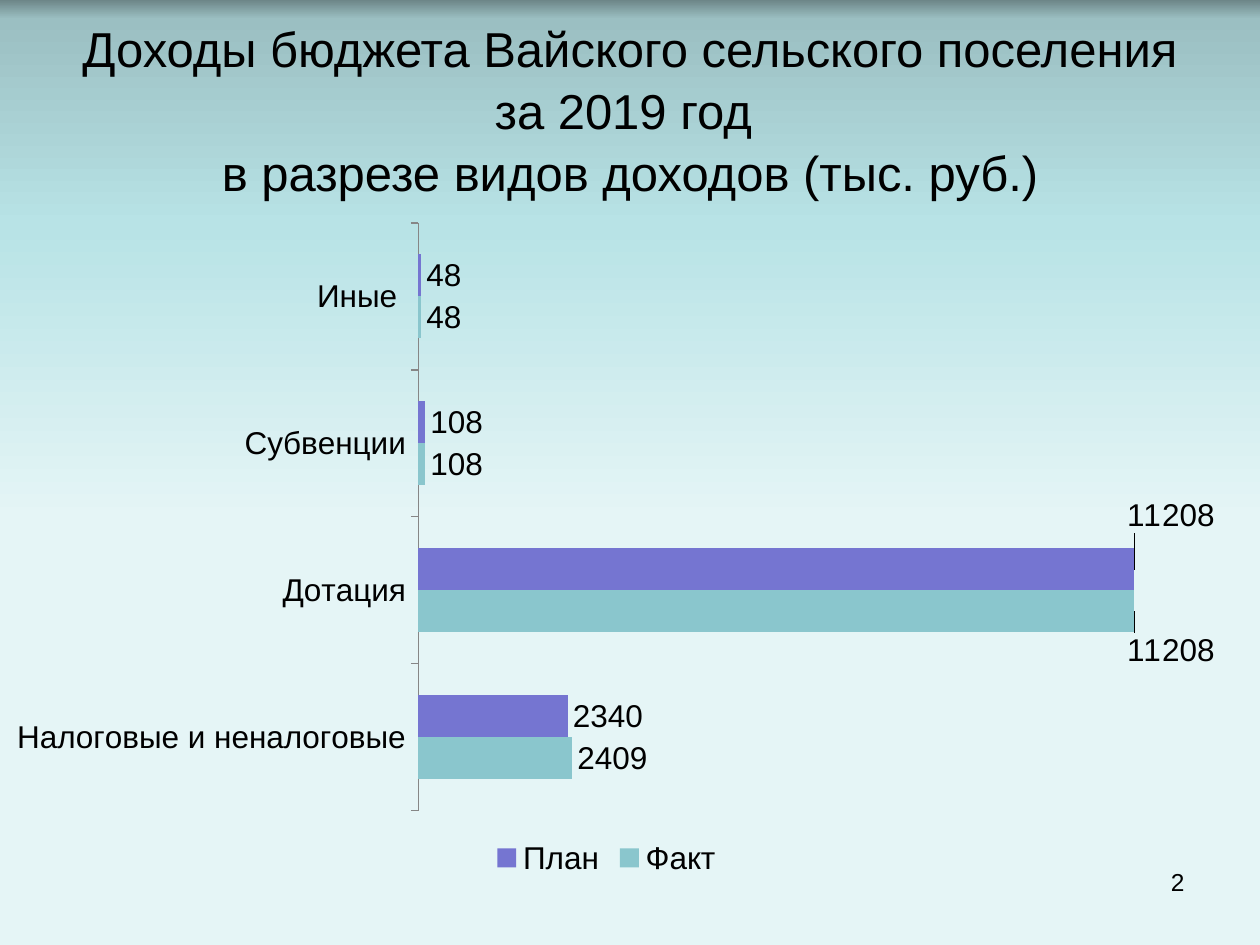
from lxml import etree
from pptx import Presentation
from pptx import util as u
from pptx.chart.data import CategoryChartData
from pptx.dml.color import RGBColor
from pptx.enum import chart as ch, text
from pptx.oxml import parse_xml
from pptx.oxml.ns import nsdecls, qn

FONT = "Arial"
COLORS = {"text": "000000", "axis": "868686", "plan": "7575D1", "fact": "8AC6CD"}
BACKGROUND = [(0, "6D8688"), (2, "9BBFC2"), (24, "B8E3E6"), (55, "E5F5F6"), (100, "E5F5F6")]
CATEGORIES = ["Налоговые и неналоговые", "Дотация", "Субвенции", "Иные "]
# name, values, colour, vertical shift of the label on the longest bar
SERIES = [
    ("Факт", (2409, 11208, 108, 48), "fact", 0.058),
    ("План", (2340, 11208, 108, 48), "plan", -0.08),
]
LONGEST = 1


def rgb(name):
    return RGBColor.from_string(COLORS[name])


def set_font(font, size):
    font.name = FONT
    font.size = u.Pt(size)
    font.bold = False
    font.color.rgb = rgb("text")


def set_background(page):
    stops = "".join(
        f'<a:gs pos="{pos * 1000}"><a:srgbClr val="{color}"/></a:gs>' for pos, color in BACKGROUND
    )
    page.background.fill.solid()
    solid = page.background._cSld.bg.bgPr.find(qn("a:solidFill"))
    gradient = parse_xml(
        f'<a:gradFill {nsdecls("a")} rotWithShape="1"><a:gsLst>{stops}</a:gsLst>'
        '<a:lin ang="5400000" scaled="0"/></a:gradFill>'
    )
    solid.getparent().replace(solid, gradient)


def add_text(page, content, left, top, width, height, size, align,
             anchor=text.MSO_ANCHOR.TOP, spacing=1.0):
    box = page.shapes.add_textbox(u.Cm(left), u.Cm(top), u.Cm(width), u.Cm(height))
    frame = box.text_frame
    frame.word_wrap = True
    frame.vertical_anchor = anchor
    para = frame.paragraphs[0]
    para.text = content
    para.alignment = align
    para.line_spacing = spacing
    for span in para.runs:
        set_font(span.font, size)


def manual_layout(**values):
    """Build a chart layout element from its settings, in schema order."""
    layout = etree.Element(qn("c:layout"))
    manual = etree.SubElement(layout, qn("c:manualLayout"))
    for name, value in values.items():
        etree.SubElement(manual, qn(f"c:{name}")).set("val", str(value))
    return layout


def format_series(series, color, shift):
    series.format.fill.solid()
    series.format.fill.fore_color.rgb = rgb(color)
    labels = series.data_labels
    labels.show_value = True
    labels.position = ch.XL_LABEL_POSITION.OUTSIDE_END
    set_font(labels.font, 18)
    series.points[LONGEST].data_label.position = ch.XL_LABEL_POSITION.OUTSIDE_END
    label = labels._element.find(qn("c:dLbl"))
    label.find(qn("c:idx")).addnext(manual_layout(x=-0.01, y=shift))


def add_income_chart(page):
    data = CategoryChartData(number_format="General")
    data.categories = CATEGORIES
    for name, values, _, _ in SERIES:
        data.add_series(name, values)
    chart = page.shapes.add_chart(
        ch.XL_CHART_TYPE.BAR_CLUSTERED, u.Cm(-0.08), u.Cm(4.24), u.Cm(24.61), u.Cm(13.54), data
    ).chart
    set_font(chart.font, 18)
    chart.has_title = False
    chart.has_legend = True
    chart.legend.position = ch.XL_LEGEND_POSITION.BOTTOM
    chart.legend.include_in_layout = False
    set_font(chart.legend.font, 18)

    axis = chart.category_axis
    axis.format.line.color.rgb = rgb("axis")
    axis.major_tick_mark = ch.XL_TICK_MARK.OUTSIDE
    set_font(axis.tick_labels.font, 18)
    scale = chart.value_axis
    scale.visible = False
    scale.has_major_gridlines = False
    scale.minimum_scale, scale.maximum_scale = 0, 12000

    plot = chart.plots[0]
    plot.gap_width = 150
    plot.vary_by_categories = False
    for series, (_, _, color, shift) in zip(plot.series, SERIES):
        format_series(series, color, shift)

    area = chart._chartSpace.chart.plotArea
    for old in area.findall(qn("c:layout")):
        area.remove(old)
    area.insert(0, manual_layout(layoutTarget="inner", xMode="edge", yMode="edge",
                                 x=0.346, y=0.019, w=0.628, h=0.875))


def main():
    deck = Presentation()
    deck.slide_width, deck.slide_height = u.Cm(25.4), u.Cm(19.05)
    page = deck.slides.add_slide(deck.slide_layouts[6])
    set_background(page)
    add_text(page, "Доходы бюджета Вайского сельского поселения за 2019 год \v"
             "в разрезе видов доходов (тыс. руб.)",
             1.27, 0.43, 22.86, 3.5, size=28, align=text.PP_ALIGN.CENTER,
             anchor=text.MSO_ANCHOR.MIDDLE, spacing=1.06)
    add_income_chart(page)
    add_text(page, "2", 18.21, 17.35, 5.92, 1.32, size=14, align=text.PP_ALIGN.RIGHT)
    deck.save("out.pptx")


if __name__ == "__main__":
    main()
